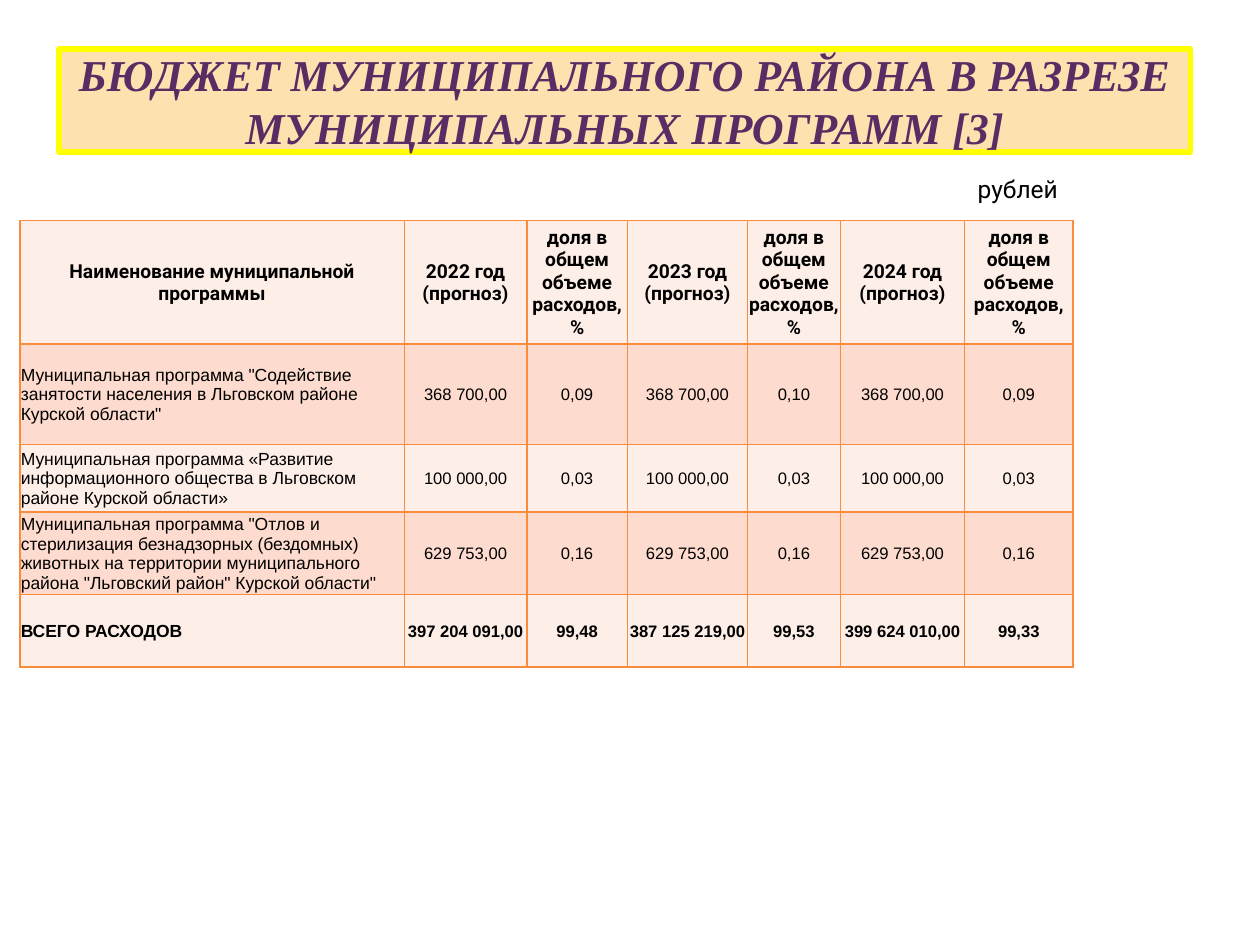
from lxml.etree import SubElement
from pptx import Presentation
from pptx.dml.color import RGBColor
from pptx.enum.text import MSO_ANCHOR as Anchor, MSO_AUTO_SIZE as AutoSize, PP_ALIGN as Align
from pptx.oxml.ns import qn
from pptx.util import Cm, Pt

BLACK = RGBColor(0x00, 0x00, 0x00)
PURPLE = RGBColor(0x5A, 0x2C, 0x64)
SAND = RGBColor(0xFD, 0xE2, 0xB0)
YELLOW = RGBColor(0xFF, 0xFF, 0x00)
LIGHT_ROW = RGBColor(0xFE, 0xEE, 0xE8)
DARK_ROW = RGBColor(0xFD, 0xDB, 0xCE)
ORANGE = RGBColor(0xFA, 0x8D, 0x3D)

HEADING = "БЮДЖЕТ МУНИЦИПАЛЬНОГО РАЙОНА В РАЗРЕЗЕ МУНИЦИПАЛЬНЫХ ПРОГРАММ [3]"
SHARE = "доля в общем объеме расходов, %"
PROGRAMS = [
    ["Наименование муниципальной программы", "2022 год (прогноз)", SHARE,
     "2023 год (прогноз)", SHARE, "2024 год (прогноз)", SHARE],
    ['Муниципальная программа "Содействие занятости населения в Льговском районе Курской области"',
     "368 700,00", "0,09", "368 700,00", "0,10", "368 700,00", "0,09"],
    ["Муниципальная программа «Развитие информационного общества в Льговском районе Курской области»",
     "100 000,00", "0,03", "100 000,00", "0,03", "100 000,00", "0,03"],
    ['Муниципальная программа "Отлов и стерилизация безнадзорных (бездомных) животных '
     'на территории муниципального района "Льговский район" Курской области"',
     "629 753,00", "0,16", "629 753,00", "0,16", "629 753,00", "0,16"],
    ["ВСЕГО РАСХОДОВ", "397 204 091,00", "99,48", "387 125 219,00", "99,53",
     "399 624 010,00", "99,33"],
]
COLUMN_WIDTHS = [7.75, 2.47, 2.03, 2.42, 1.87, 2.51, 2.18]
ROW_HEIGHTS = [2.48, 2.03, 1.36, 1.67, 1.46]


def apply(target, values):
    for name, value in values.items():
        setattr(target, name, value)


def write(paragraph, text, color, align, **font_values):
    paragraph.alignment = align
    run = paragraph.add_run()
    run.text = text
    apply(run.font, font_values)
    run.font.color.rgb = color


def add_borders(cell):
    properties = cell._tc.get_or_add_tcPr()
    for position, side in enumerate(("a:lnL", "a:lnR", "a:lnT", "a:lnB")):
        border = SubElement(properties, qn(side), w=str(Pt(1)))
        fill = SubElement(border, qn("a:solidFill"))
        SubElement(fill, qn("a:srgbClr"), val=str(ORANGE))
        properties.insert(position, border)


def place_heading(slide, left, top, width, height):
    heading = slide.shapes.title
    apply(heading, dict(left=left, top=top, width=width, height=height))
    heading.fill.solid()
    heading.fill.fore_color.rgb = SAND
    heading.line.color.rgb = YELLOW
    heading.line.width = Pt(3.15)
    SubElement(heading.line._get_or_add_ln(), qn("a:round"))
    frame = heading.text_frame
    apply(frame, dict(margin_left=Cm(0.13), margin_right=Cm(0.13), margin_top=0,
                      margin_bottom=0, vertical_anchor=Anchor.MIDDLE,
                      word_wrap=True, auto_size=AutoSize.NONE))
    write(frame.paragraphs[0], HEADING, PURPLE, Align.CENTER,
          name="Times New Roman", size=Pt(25.2), bold=True, italic=True)


def place_unit(slide, left, top, width, height):
    frame = slide.shapes.add_textbox(left, top, width, height).text_frame
    apply(frame, dict(word_wrap=True, auto_size=AutoSize.SHAPE_TO_FIT_TEXT))
    write(frame.paragraphs[0], "рублей", BLACK, Align.LEFT, name="Roboto", size=Pt(14))


def place_programs(slide, left, top):
    table = slide.shapes.add_table(
        len(ROW_HEIGHTS), len(COLUMN_WIDTHS), left, top,
        Cm(sum(COLUMN_WIDTHS)), Cm(sum(ROW_HEIGHTS))).table
    for column, width in zip(table.columns, COLUMN_WIDTHS):
        column.width = Cm(width)
    for row, height in zip(table.rows, ROW_HEIGHTS):
        row.height = Cm(height)

    last = len(PROGRAMS) - 1
    for r, values in enumerate(PROGRAMS):
        for c, value in enumerate(values):
            cell = table.cell(r, c)
            apply(cell, dict(margin_left=Cm(0.02), margin_right=Cm(0.02),
                             margin_top=Cm(0.02), margin_bottom=0,
                             vertical_anchor=Anchor.MIDDLE))
            cell.fill.solid()
            cell.fill.fore_color.rgb = DARK_ROW if r % 2 else LIGHT_ROW
            add_borders(cell)
            # Header in Roboto, program names larger than the figures
            size = 11 if r == 0 else 10 if c == 0 else 9.5
            write(cell.text_frame.paragraphs[0], value, BLACK,
                  Align.LEFT if r and c == 0 else Align.CENTER,
                  name="Arial" if r else "Roboto", size=Pt(size), bold=r in (0, last))


def main():
    deck = Presentation()
    deck.slide_width, deck.slide_height = Cm(25.4), Cm(19.05)
    slide = deck.slides.add_slide(deck.slide_layouts[5])
    place_heading(slide, Cm(1.19), Cm(0.99), Cm(22.81), Cm(2.08))
    place_programs(slide, Cm(0.4), Cm(4.45))
    place_unit(slide, Cm(19.46), Cm(3.38), Cm(4.85), Cm(0.86))
    deck.save("out.pptx")


if __name__ == "__main__":
    main()
